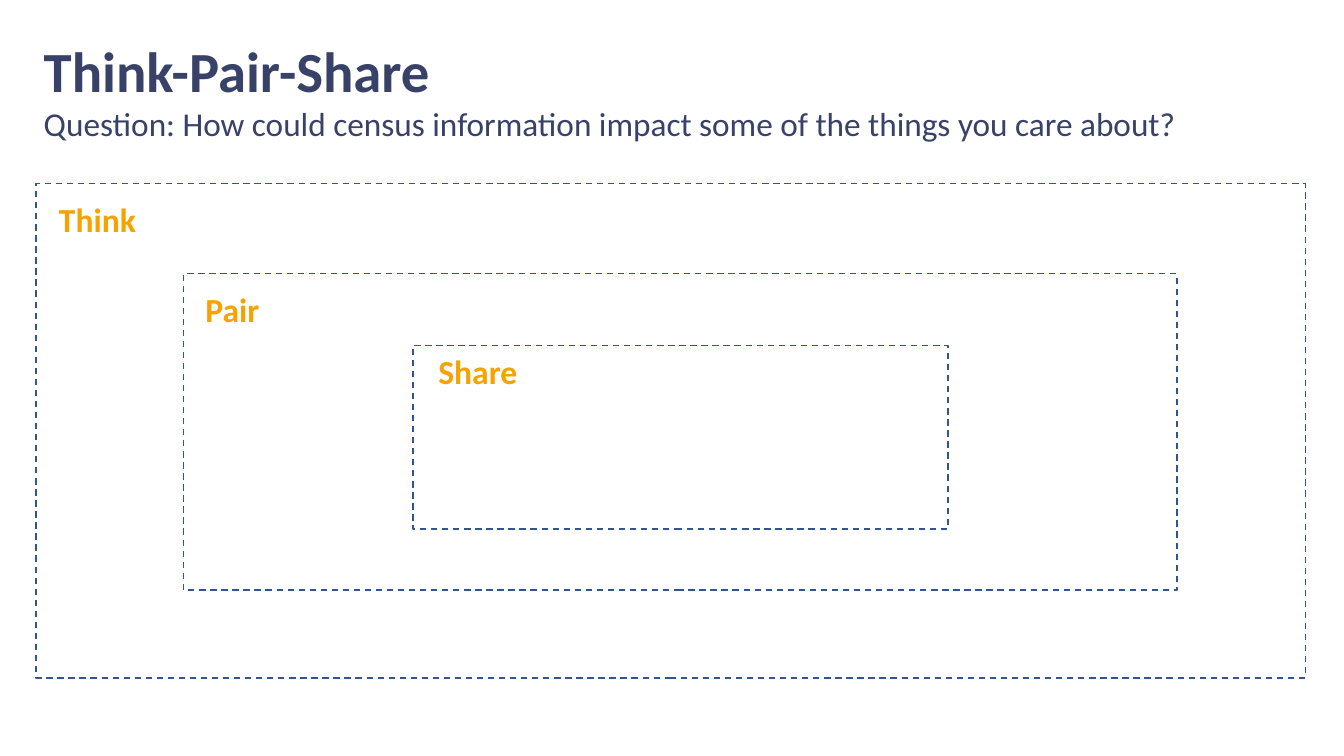
from pptx import Presentation
from pptx.dml.color import RGBColor
from pptx.enum.dml import MSO_LINE
from pptx.enum.shapes import MSO_SHAPE
from pptx.enum.text import MSO_ANCHOR, MSO_AUTO_SIZE
from pptx.util import Cm, Pt

NAVY = RGBColor(0x38, 0x41, 0x68)
BLUE = RGBColor(0x32, 0x54, 0x91)
ORANGE = RGBColor(0xF6, 0xA2, 0x00)
WHITE = RGBColor(0xFF, 0xFF, 0xFF)

TITLE = {"size": Pt(54), "bold": True}
QUESTION = {"size": Pt(31.7), "bold": False}
LABEL = {"size": Pt(32), "bold": True}

# Stage name, frame (left, top, width, height), label (left, top), all in cm
STAGES = [
    ("Think", (1.22, 6.17, 42.65, 16.61), (1.73, 6.55)),
    ("Pair", (6.17, 9.19, 33.38, 10.64), (6.65, 9.58)),
    ("Share", (13.87, 11.61, 17.98, 6.17), (14.48, 11.66)),
]
LABEL_SIZE = (4.95, 1.63)


def add_text(s, text, box, font, color, spacing=1.0,
             anchor=MSO_ANCHOR.TOP, auto_size=MSO_AUTO_SIZE.NONE):
    tf = s.shapes.add_textbox(*map(Cm, box)).text_frame
    frame_format = {"word_wrap": True, "vertical_anchor": anchor,
                    "auto_size": auto_size}
    for name, value in frame_format.items():
        setattr(tf, name, value)
    p = tf.paragraphs[0]
    p.line_spacing = spacing
    r = p.add_run()
    r.text = text
    for name, value in {"name": "Calibri", **font}.items():
        setattr(r.font, name, value)
    r.font.color.rgb = color


def add_frame(s, box):
    sp = s.shapes.add_shape(MSO_SHAPE.RECTANGLE, *map(Cm, box))
    sp.shadow.inherit = False
    sp.fill.solid()
    sp.fill.fore_color.rgb = WHITE
    sp.line.color.rgb = BLUE
    for name, value in {"width": Pt(1.5), "dash_style": MSO_LINE.DASH}.items():
        setattr(sp.line, name, value)


def main():
    prs = Presentation()
    prs.slide_width, prs.slide_height = Cm(45.16), Cm(25.4)
    s = prs.slides.add_slide(prs.slide_layouts[6])

    # Heading and question
    add_text(s, "Think-Pair-Share", (1.22, 1.55, 40.84, 1.9), TITLE, NAVY,
             spacing=0.9, anchor=MSO_ANCHOR.MIDDLE)
    add_text(s, "Question: How could census information impact some of the "
             "things you care about?", (1.22, 3.61, 40.84, 1.55), QUESTION,
             NAVY, spacing=0.8)

    # Nested frames, each with its stage label
    for name, frame, corner in STAGES:
        add_frame(s, frame)
        add_text(s, name, corner + LABEL_SIZE, LABEL, ORANGE,
                 auto_size=MSO_AUTO_SIZE.SHAPE_TO_FIT_TEXT)

    prs.save("out.pptx")


if __name__ == "__main__":
    main()
